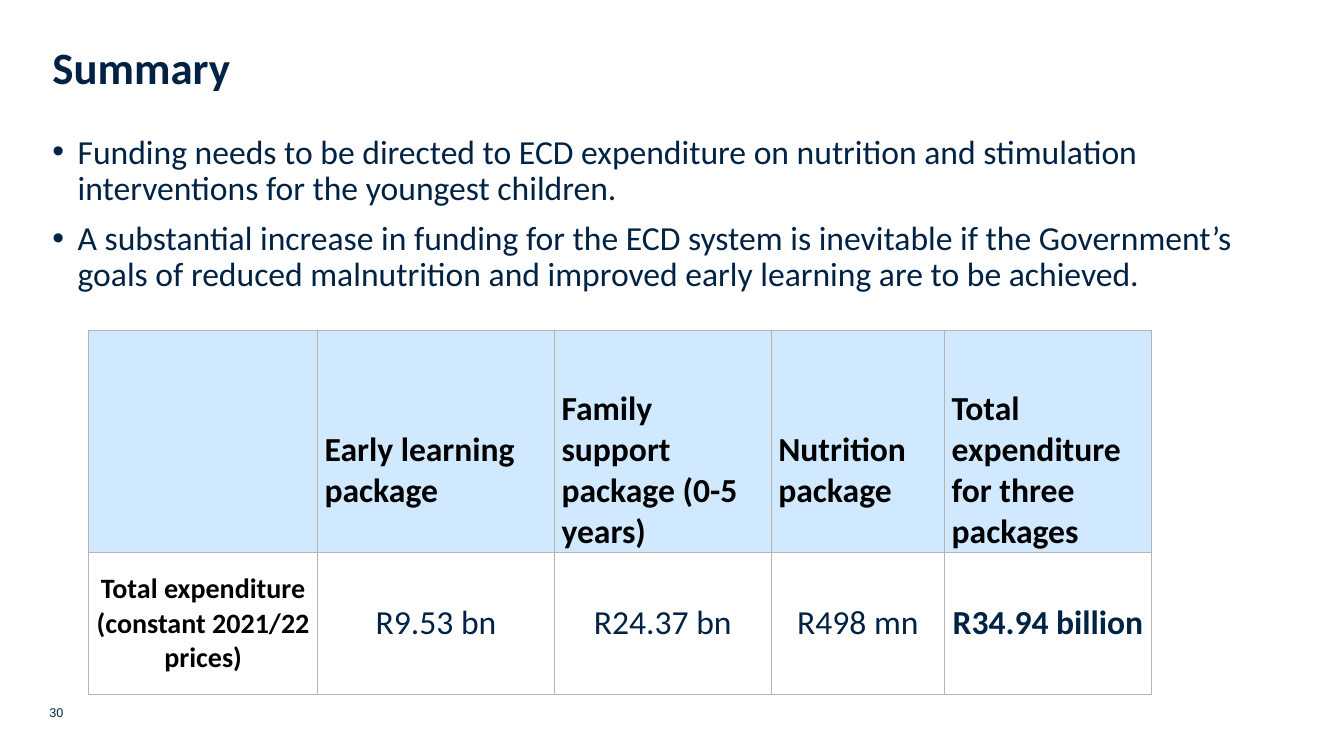
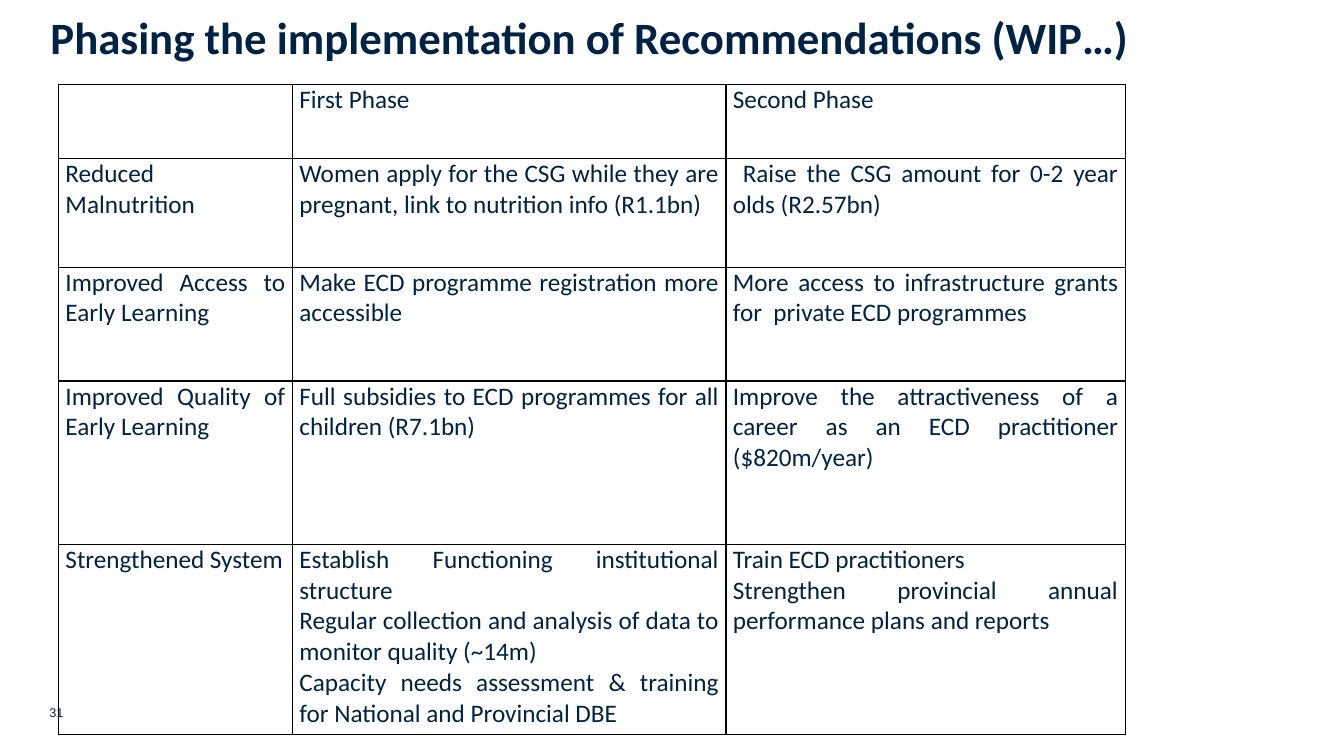
from dataclasses import dataclass

from lxml.etree import SubElement
from pptx import Presentation
from pptx.dml.color import RGBColor
from pptx.enum.text import MSO_ANCHOR, MSO_AUTO_SIZE, PP_ALIGN
from pptx.oxml.ns import qn
from pptx.util import Inches, Pt

NAVY = "002345"
BLACK = "000000"
GREY = "B5B5B5"
PALE_BLUE = "D1E9FF"
TEXT_FONT = "Calibri"
NUMBER_FONT = "Arial"


@dataclass(frozen=True)
class CellStyle:
    size: int
    colour: str = NAVY
    bold: bool = False
    align: PP_ALIGN = PP_ALIGN.CENTER
    anchor: MSO_ANCHOR = MSO_ANCHOR.MIDDLE
    fill: str | None = None
    top_margin: float = 0


@dataclass(frozen=True)
class Cell:
    text: str
    style: CellStyle


@dataclass(frozen=True)
class Grid:
    left: float
    top: float
    columns: tuple[float, ...]
    rows: tuple[float, ...]
    border: str
    cells: list[list[Cell]]


PACKAGE_HEAD = CellStyle(24, BLACK, True, PP_ALIGN.LEFT, fill=PALE_BLUE, top_margin=0.57)
ROW_LABEL = CellStyle(20, BLACK, True)
AMOUNT = CellStyle(24)
TOTAL = CellStyle(24, bold=True)
PHASE = CellStyle(18, align=PP_ALIGN.JUSTIFY, anchor=MSO_ANCHOR.TOP)

SUMMARY_POINTS = [
    "Funding needs to be directed to ECD expenditure on nutrition and stimulation "
    "interventions for the youngest children.",
    "A substantial increase in funding for the ECD system is inevitable if the Government’s "
    "goals of reduced malnutrition and improved early learning are to be achieved.",
]
PACKAGES = [
    "",
    "Early learning package",
    "Family support package (0-5 years)",
    "Nutrition package",
    "Total expenditure for three packages",
]
AMOUNTS = ["R9.53 bn", "R24.37 bn", "R498 mn"]
PHASES = [
    ["", "First Phase", "Second Phase"],
    [
        "Reduced Malnutrition",
        "Women apply for the CSG while they are pregnant, link to nutrition info (R1.1bn)",
        " Raise the CSG amount for 0-2 year olds (R2.57bn)",
    ],
    [
        "Improved Access to Early Learning",
        "Make ECD programme registration more accessible",
        "More access to infrastructure grants for  private ECD programmes",
    ],
    [
        "Improved Quality of Early Learning",
        "Full subsidies to ECD programmes for all children (R7.1bn)",
        "Improve the attractiveness of a career as an ECD practitioner ($820m/year)",
    ],
    [
        "Strengthened System",
        "Establish Functioning institutional structure\n"
        "Regular collection and analysis of data to monitor quality (~14m)\n"
        "Capacity needs assessment & training for National and Provincial DBE",
        "Train ECD practitioners\n"
        "Strengthen provincial annual performance plans and reports",
    ],
]

EXPENDITURE_GRID = Grid(
    0.88, 3.28, (2.27, 2.35, 2.15, 1.72, 2.05), (2.2, 1.41), GREY,
    [
        [Cell(package, PACKAGE_HEAD) for package in PACKAGES],
        [
            Cell("Total expenditure (constant 2021/22 prices)", ROW_LABEL),
            *(Cell(amount, AMOUNT) for amount in AMOUNTS),
            Cell("R34.94 billion", TOTAL),
        ],
    ],
)
PHASE_GRID = Grid(
    0.58, 0.84, (2.32, 4.3, 3.96), (0.73, 1.08, 1.13, 1.62, 1.89), BLACK,
    [[Cell(text, PHASE) for text in row] for row in PHASES],
)


def rgb(colour: str) -> RGBColor:
    return RGBColor.from_string(colour)


def set_font(paragraph, size: int, colour: str = NAVY, bold: bool = False,
             face: str = TEXT_FONT) -> None:
    font = paragraph.font
    font.name = face
    font.size = Pt(size)
    font.bold = bold
    font.color.rgb = rgb(colour)


def place(shape, left: float, top: float, width: float, height: float) -> None:
    shape.left, shape.top = Inches(left), Inches(top)
    shape.width, shape.height = Inches(width), Inches(height)


def start_slide(deck, layout: int, title: str, left: float, top: float,
                height: float, number: int):
    slide = deck.slides.add_slide(deck.slide_layouts[layout])
    heading = slide.shapes.title
    place(heading, left, top, 12.53, height)
    frame = heading.text_frame
    frame.text = title
    frame.auto_size = MSO_AUTO_SIZE.NONE
    frame.vertical_anchor = MSO_ANCHOR.TOP
    paragraph = frame.paragraphs[0]
    paragraph.alignment = PP_ALIGN.LEFT
    paragraph.line_spacing = 0.9
    set_font(paragraph, 32, bold=True)

    footer = slide.shapes.add_textbox(Inches(0.39), Inches(6.94), Inches(1.58), Inches(0.25))
    footer.text_frame.word_wrap = True
    footer.text_frame.text = str(number)
    set_font(footer.text_frame.paragraphs[0], 9, face=NUMBER_FONT)
    return slide


def fill_body(body, points: list[str]) -> None:
    place(body, 0.42, 1.29, 12.53, 5.46)
    frame = body.text_frame
    frame.text = "\n".join(points)
    frame.auto_size = MSO_AUTO_SIZE.NONE
    frame.vertical_anchor = MSO_ANCHOR.TOP
    for index, paragraph in enumerate(frame.paragraphs):
        properties = paragraph._p.get_or_add_pPr()
        properties.set("marL", str(Inches(0.25)))
        properties.set("indent", str(-Inches(0.25)))
        paragraph.line_spacing = 0.9
        paragraph.space_before = Pt(10 if index else 0)
        set_font(paragraph, 24)


def add_borders(cell, colour: str) -> None:
    properties = cell._tc.get_or_add_tcPr()
    for index, side in enumerate(("a:lnL", "a:lnR", "a:lnT", "a:lnB")):
        line = SubElement(properties, qn(side), w=str(Pt(1)))
        SubElement(SubElement(line, qn("a:solidFill")), qn("a:srgbClr"), val=colour)
        properties.insert(index, line)


def format_cell(cell, content: Cell, border: str) -> None:
    style = content.style
    cell.text = content.text
    cell.vertical_anchor = style.anchor
    cell.margin_left = cell.margin_right = Inches(0.07)
    cell.margin_top, cell.margin_bottom = Inches(style.top_margin), 0
    if style.fill:
        cell.fill.solid()
        cell.fill.fore_color.rgb = rgb(style.fill)
    else:
        cell.fill.background()
    add_borders(cell, border)
    for paragraph in cell.text_frame.paragraphs:
        paragraph.alignment = style.align
        set_font(paragraph, style.size, style.colour, style.bold)


def draw_grid(slide, grid: Grid) -> None:
    table = slide.shapes.add_table(
        len(grid.rows), len(grid.columns), Inches(grid.left), Inches(grid.top),
        Inches(sum(grid.columns)), Inches(sum(grid.rows)),
    ).table
    table.first_row = table.horz_banding = False
    for column, width in zip(table.columns, grid.columns):
        column.width = Inches(width)
    for row, height, contents in zip(table.rows, grid.rows, grid.cells):
        row.height = Inches(height)
        for cell, content in zip(row.cells, contents):
            format_cell(cell, content, grid.border)


def main() -> None:
    deck = Presentation()
    deck.slide_width, deck.slide_height = Inches(13.33), Inches(7.5)

    summary = start_slide(deck, 1, "Summary", 0.42, 0.4, 1.08, 30)
    fill_body(summary.placeholders[1], SUMMARY_POINTS)
    draw_grid(summary, EXPENDITURE_GRID)

    phasing = start_slide(
        deck, 5, "Phasing the implementation of Recommendations (WIP…)", 0.4, 0.11, 0.87, 31
    )
    draw_grid(phasing, PHASE_GRID)

    deck.save("out.pptx")


if __name__ == "__main__":
    main()
